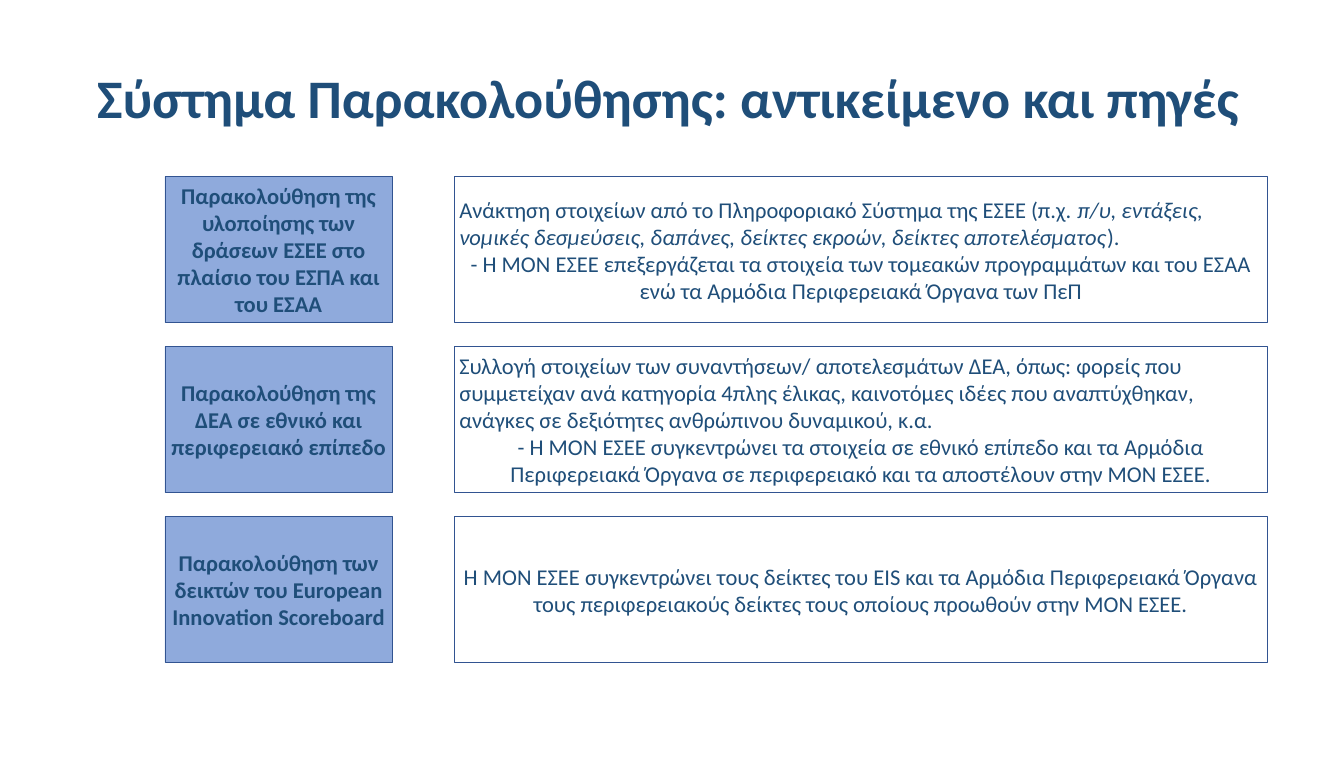
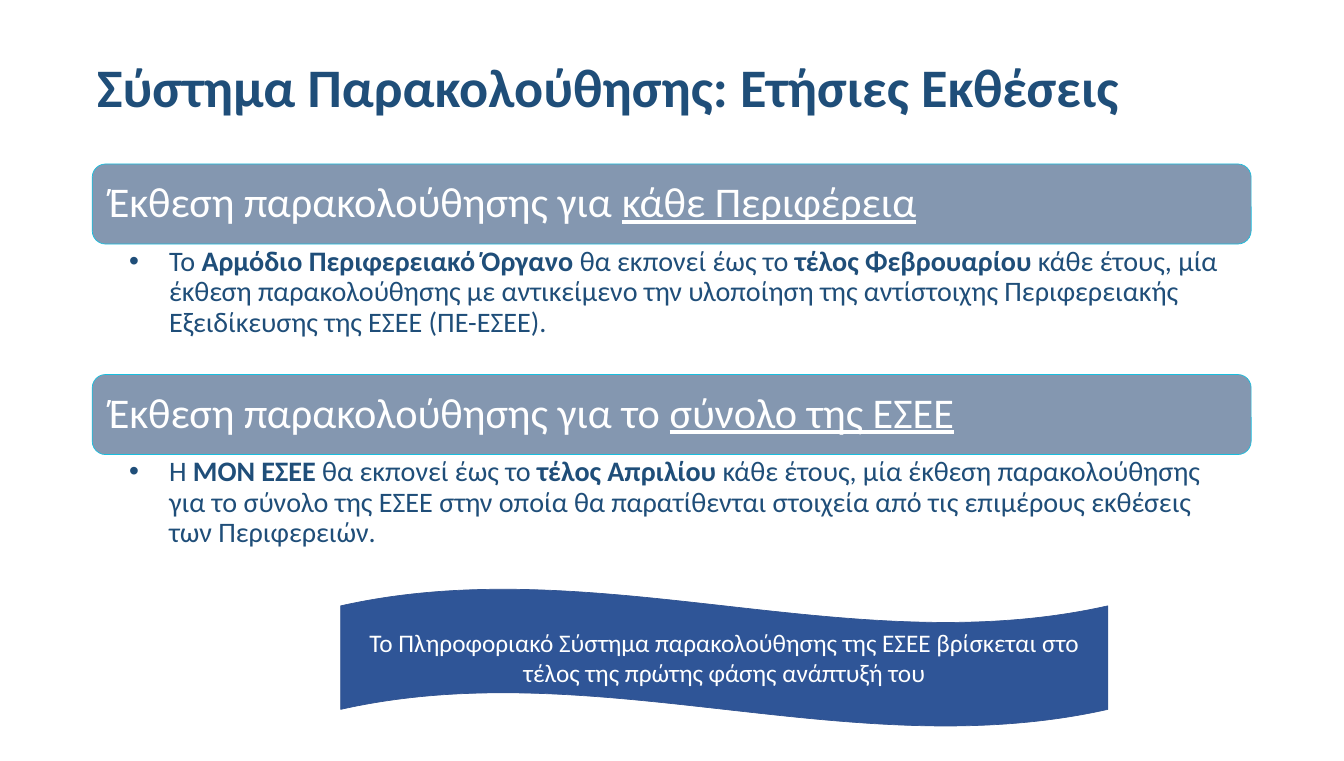
from dataclasses import dataclass
from typing import NamedTuple

from lxml import etree
from pptx import Presentation
from pptx import util as u
from pptx.dml.color import RGBColor
from pptx.enum import shapes, text
from pptx.oxml import ns

FONT = "Calibri"
NAVY, WHITE = "1F4E79", "FFFFFF"
BLUE, EDGE, DEEP = "8FAADC", "325491", "2F5597"
SLATE, CYAN = "8497B0", "19BEDE"
LEFT, CENTER = text.PP_ALIGN.LEFT, text.PP_ALIGN.CENTER
EDGE_X, FULL = 4.62, 58.06


class Run(NamedTuple):
    words: str
    bold: bool = False
    slant: bool = False
    under: bool = False


class Para(NamedTuple):
    runs: list[Run]
    align: text.PP_ALIGN = LEFT
    gap: float = 1.0
    dot: bool = False


class Area(NamedTuple):
    left: float
    top: float
    width: float
    height: float


@dataclass
class Topic:
    label: str
    paras: list[Para]


@dataclass
class Report:
    head: list[Run]
    body: list[Run]
    height: float


TOPICS = [
    Topic("Παρακολούθηση της υλοποίησης των δράσεων ΕΣΕΕ στο πλαίσιο του ΕΣΠΑ και του ΕΣΑΑ", [
        Para([
            Run("Ανάκτηση στοιχείων από το Πληροφοριακό Σύστημα της ΕΣΕΕ (π.χ. "),
            Run("π/υ, εντάξεις, νομικές δεσμεύσεις, δαπάνες, δείκτες εκροών, "
                "δείκτες αποτελέσματος", slant=True),
            Run(")."),
        ]),
        Para([Run("- Η ΜΟΝ ΕΣΕΕ επεξεργάζεται τα στοιχεία των τομεακών προγραμμάτων και του "
                  "ΕΣΑΑ ενώ τα Αρμόδια Περιφερειακά Όργανα των ΠεΠ")], CENTER),
    ]),
    Topic("Παρακολούθηση της ΔΕΑ σε εθνικό και περιφερειακό επίπεδο", [
        Para([Run("Συλλογή στοιχείων των συναντήσεων/ αποτελεσμάτων ΔΕΑ, όπως: φορείς που "
                  "συμμετείχαν ανά κατηγορία 4πλης έλικας, καινοτόμες ιδέες που αναπτύχθηκαν, "
                  "ανάγκες σε δεξιότητες ανθρώπινου δυναμικού, κ.α.")]),
        Para([Run("- Η ΜΟΝ ΕΣΕΕ συγκεντρώνει τα στοιχεία σε εθνικό επίπεδο και τα Αρμόδια "
                  "Περιφερειακά Όργανα σε περιφερειακό και τα αποστέλουν στην ΜΟΝ ΕΣΕΕ.")], CENTER),
    ]),
    Topic("Παρακολούθηση των δεικτών του European Innovation Scoreboard", [
        Para([Run("Η ΜΟΝ ΕΣΕΕ συγκεντρώνει τους δείκτες του EIS και τα Αρμόδια Περιφερειακά "
                  "Όργανα τους περιφερειακούς δείκτες τους οποίους προωθούν στην ΜΟΝ ΕΣΕΕ.")], CENTER),
    ]),
]

REPORTS = [
    Report(
        [Run("Έκθεση παρακολούθησης για "), Run("κάθε Περιφέρεια", under=True)],
        [
            Run("Το "),
            Run("Αρμόδιο Περιφερειακό Όργανο ", bold=True),
            Run("θα εκπονεί έως το "),
            Run("τέλος Φεβρουαρίου ", bold=True),
            Run("κάθε έτους, μία έκθεση παρακολούθησης με αντικείμενο την υλοποίηση της "
                "αντίστοιχης Περιφερειακής Εξειδίκευσης της ΕΣΕΕ (ΠΕ-ΕΣΕΕ)."),
        ], 6.55),
    Report(
        [Run("Έκθεση παρακολούθησης για το "), Run("σύνολο της ΕΣΕΕ", under=True)],
        [
            Run("Η "),
            Run("ΜΟΝ ΕΣΕΕ ", bold=True),
            Run("θα εκπονεί έως το "),
            Run("τέλος Απριλίου ", bold=True),
            Run("κάθε έτους, μία έκθεση παρακολούθησης για το σύνολο της ΕΣΕΕ στην οποία θα "
                "παρατίθενται στοιχεία από τις επιμέρους εκθέσεις των Περιφερειών."),
        ], 4.95),
]


def paint(form, tone: str) -> None:
    form.solid()
    form.fore_color.rgb = RGBColor.from_string(tone)


def place(area: Area) -> list[u.Cm]:
    return [u.Cm(side) for side in area]


def add_dot(para) -> None:
    props = para._p.get_or_add_pPr()
    props.set("marL", str(u.Cm(2)))
    props.set("indent", str(-u.Cm(2)))
    etree.SubElement(props, ns.qn("a:buFont"), typeface="Arial")
    etree.SubElement(props, ns.qn("a:buChar"), char="•")


def write(frame, paras: list[Para], size: float, tone: str,
          anchor=text.MSO_ANCHOR.MIDDLE, inset: tuple = (0.25, 0.13, 0.25, 0.13)) -> None:
    frame.word_wrap = True
    frame.auto_size = text.MSO_AUTO_SIZE.NONE
    frame.vertical_anchor = anchor
    (frame.margin_left, frame.margin_top,
     frame.margin_right, frame.margin_bottom) = [u.Cm(side) for side in inset]
    for i, item in enumerate(paras):
        para = frame.add_paragraph() if i else frame.paragraphs[0]
        if item.dot:
            para.level = 1
            add_dot(para)
        para.alignment = item.align
        para.line_spacing = item.gap
        for part in item.runs:
            run = para.add_run()
            run.text = part.words
            font = run.font
            font.name, font.size = FONT, u.Pt(size)
            font.bold, font.italic, font.underline = part.bold, part.slant, part.under
            paint(font.fill, tone)


def add_box(slide, kind, area: Area, fill: str | None, line: str):
    box = slide.shapes.add_shape(kind, *place(area))
    box.shadow.inherit = False
    if fill:
        paint(box.fill, fill)
    else:
        box.fill.background()
    paint(box.line.fill, line)
    box.line.width = u.Pt(1)
    return box.text_frame


def add_page(deck, title: str, top: float, height: float):
    slide = deck.slides.add_slide(deck.slide_layouts[5])
    head = slide.shapes.title
    head.left, head.top, head.width, head.height = place(Area(EDGE_X, top, FULL, height))
    write(head.text_frame, [Para([Run(title, bold=True)], gap=0.9)], 77, NAVY)
    return slide


def add_topic(slide, topic: Topic, top: float) -> None:
    kind, height = shapes.MSO_SHAPE.RECTANGLE, 7.3
    label = add_box(slide, kind, Area(8.26, top, 11.4, height), BLUE, EDGE)
    write(label, [Para([Run(topic.label, bold=True)], CENTER)], 32, NAVY)
    note = add_box(slide, kind, Area(22.76, top, 40.74, height), None, EDGE)
    write(note, topic.paras, 32, NAVY)


def add_report(slide, report: Report, top: float) -> None:
    height = 4.01
    bar = add_box(slide, shapes.MSO_SHAPE.ROUNDED_RECTANGLE,
                  Area(EDGE_X, top, FULL, height), SLATE, CYAN)
    write(bar, [Para(report.head, gap=0.9)], 60, WHITE, inset=(0.64,) * 4)
    body = slide.shapes.add_textbox(*place(Area(EDGE_X, top + height, FULL, report.height)))
    write(body.text_frame, [Para(report.body, gap=0.9, dot=True)], 40, NAVY,
          text.MSO_ANCHOR.TOP, (1.85, 0.15, 0.79, 0.15))


def main() -> None:
    deck = Presentation()
    deck.slide_width, deck.slide_height = u.Cm(67.33), u.Cm(38.1)

    slide = add_page(deck, "Σύστημα Παρακολούθησης: αντικείμενο και πηγές", 2.03, 6.02)
    for i, topic in enumerate(TOPICS):
        add_topic(slide, topic, 8.85 + 8.51 * i)

    slide = add_page(deck, "Σύστημα Παρακολούθησης: Ετήσιες Εκθέσεις", 2.06, 4.93)
    for i, report in enumerate(REPORTS):
        add_report(slide, report, 8.21 + 10.54 * i)
    wave = add_box(slide, shapes.MSO_SHAPE.WAVE, Area(17.07, 29.47, 38.43, 6.91), DEEP, EDGE)
    write(wave, [Para([Run("Το Πληροφοριακό Σύστημα παρακολούθησης της ΕΣΕΕ βρίσκεται στο "
                           "τέλος της πρώτης φάσης ανάπτυξή του")], CENTER)], 35.9, WHITE)

    deck.save("out.pptx")


if __name__ == "__main__":
    main()
